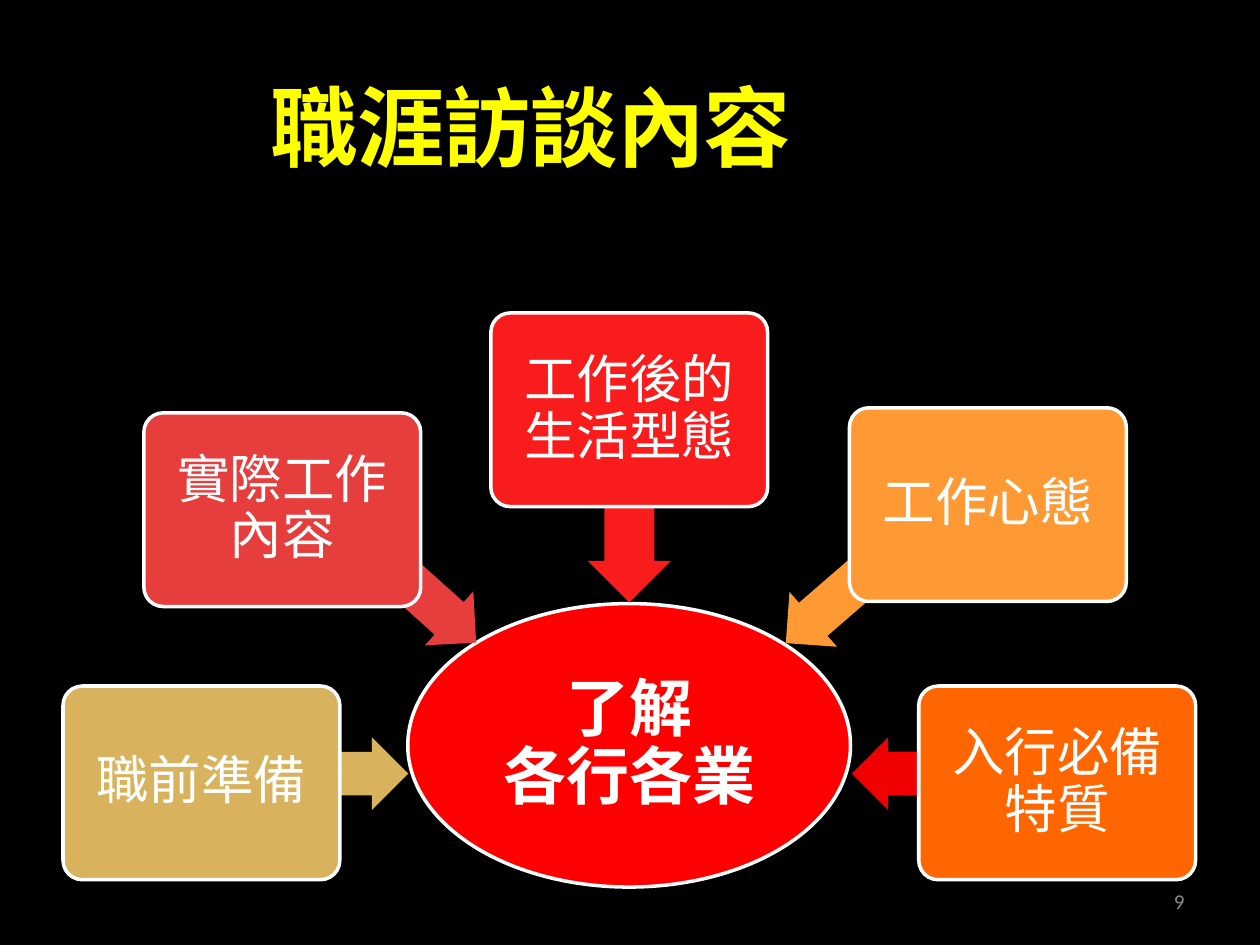
from lxml import etree
from pptx import Presentation
from pptx.dml.color import RGBColor
from pptx.enum.shapes import MSO_SHAPE
from pptx.enum.text import MSO_ANCHOR, MSO_AUTO_SIZE, PP_ALIGN
from pptx.oxml.ns import qn
from pptx.util import Pt

OVAL, TILE, ARROW = MSO_SHAPE.OVAL, MSO_SHAPE.ROUNDED_RECTANGLE, MSO_SHAPE.LEFT_ARROW
MIDDLE, BOTTOM = MSO_ANCHOR.MIDDLE, MSO_ANCHOR.BOTTOM
LEFT, CENTER, RIGHT = PP_ALIGN.LEFT, PP_ALIGN.CENTER, PP_ALIGN.RIGHT

CJK = "Noto Sans CJK SC"
COLORS = {
    "black": "000000", "white": "FFFFFF", "yellow": "FFFF00", "grey": "8C8C8C",
    "red": "FF0000", "sand": "D8B25C", "coral": "E63D3D", "scarlet": "F91C1C",
    "amber": "FF9933", "orange": "FF6600", "crimson": "F00000",
}


def rgb(name):
    return RGBColor.from_string(COLORS[name])


def write(shape, text, size, color, align=CENTER, anchor=MIDDLE, font=CJK,
          bold=False, margins=(7.2, 3.6), spacing=1.0):
    """Fill the shape with one paragraph; margins are (sides, top and bottom)."""
    frame = shape.text_frame
    sides, ends = map(Pt, margins)
    for key, value in {"word_wrap": True, "auto_size": MSO_AUTO_SIZE.NONE,
                       "vertical_anchor": anchor,
                       "margin_left": sides, "margin_right": sides,
                       "margin_top": ends, "margin_bottom": ends}.items():
        setattr(frame, key, value)
    frame.text = text
    paragraph = frame.paragraphs[0]
    paragraph.alignment = align
    paragraph.line_spacing = spacing
    for run in paragraph.runs:
        for key, value in {"name": font, "size": Pt(size), "bold": bold}.items():
            setattr(run.font, key, value)
        run.font.color.rgb = rgb(color)
        east_asian = etree.SubElement(run.font._element, qn("a:ea"))
        east_asian.set("typeface", font)


prs = Presentation()
prs.slide_width, prs.slide_height = Pt(720), Pt(540)
slide = prs.slides.add_slide(prs.slide_layouts[5])
slide.background.fill.solid()
slide.background.fill.fore_color.rgb = rgb("black")
shapes = slide.shapes

title = shapes.title
title.left, title.top, title.width, title.height = Pt(147.6), Pt(31.7), Pt(471.6), Pt(73.4)
write(title, "職涯訪談內容", 50, "yellow", LEFT, BOTTOM, bold=True)
title.text_frame.paragraphs[0].runs[0].font._element.set("spc", "-60")

page_number = shapes.add_textbox(Pt(516), Pt(500.5), Pt(168), Pt(28.75))
write(page_number, "9", 12, "grey", RIGHT, font="Calibri")

# Central topic
topic = shapes.add_shape(OVAL, Pt(233), Pt(344.9), Pt(253), Pt(162))
topic.shadow.inherit = False
topic.fill.solid()
topic.fill.fore_color.rgb = rgb("red")
topic.line.color.rgb = rgb("white")
topic.line.width = Pt(2)
write(topic, "了解\v各行各業", 36, "white", bold=True, margins=(2, 2), spacing=0.9)

# Aspects around the topic: text, tile colour, tile left and top,
# arrow colour, arrow left, top, width, height and rotation
TILE_W, TILE_H = 158.2, 110.7
aspects = [
    ("職前準備", "sand", 36, 392, "sand", (121.7, 421.3, 111.6, 41.5), 180),
    ("實際工作內容", "coral", 82.2, 235.9, "coral", (153.4, 301, 136.1, 41.5), 221.9),
    ("工作後的生活型態", "scarlet", 280.5, 178.8, "scarlet", (297, 257.8, 125.3, 47.5), 270),
    ("工作心態", "amber", 485.4, 233, "amber", (432, 301, 139.7, 41.5), 319.1),
    ("入行必備特質", "orange", 525, 392, "crimson", (486.7, 421.3, 111.6, 41.5), 0),
]
for text, tile_color, left, top, arrow_color, arrow_box, angle in aspects:
    arrow = shapes.add_shape(ARROW, *map(Pt, arrow_box))
    arrow.adjustments[0], arrow.adjustments[1] = 0.6, 0.5
    arrow.rotation = angle
    arrow.line.fill.background()

    tile = shapes.add_shape(TILE, Pt(left), Pt(top), Pt(TILE_W), Pt(TILE_H))
    tile.adjustments[0] = 0.1
    tile.line.color.rgb = rgb("white")
    tile.line.width = Pt(2)
    write(tile, text, 30, "white", margins=(4.7, 4.7), spacing=0.9)

    for shape, color in ((arrow, arrow_color), (tile, tile_color)):
        shape.shadow.inherit = False
        shape.fill.solid()
        shape.fill.fore_color.rgb = rgb(color)

prs.save("out.pptx")
